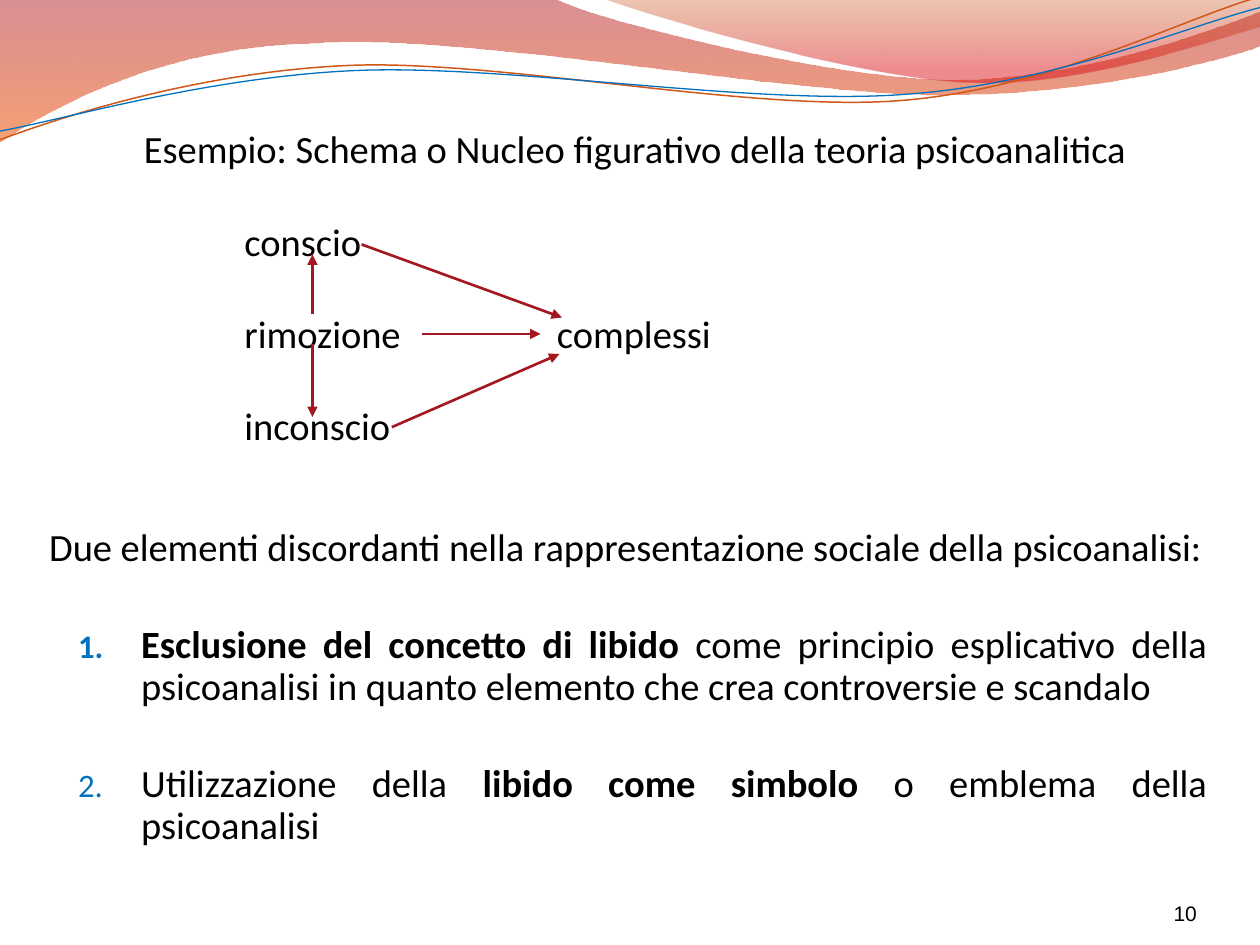
from dataclasses import dataclass

from lxml import etree
from pptx import Presentation
from pptx.dml.color import RGBColor
from pptx.enum.shapes import MSO_CONNECTOR
from pptx.enum.text import MSO_ANCHOR, MSO_AUTO_SIZE, PP_ALIGN
from pptx.oxml.ns import qn
from pptx.util import Inches, Pt

LEFT, CENTER, RIGHT, JUSTIFY = PP_ALIGN.LEFT, PP_ALIGN.CENTER, PP_ALIGN.RIGHT, PP_ALIGN.JUSTIFY
TOP, BOTTOM = MSO_ANCHOR.TOP, MSO_ANCHOR.BOTTOM
STRAIGHT = MSO_CONNECTOR.STRAIGHT


@dataclass(frozen=True)
class Theme:
    font: str = "Calibri"
    number_font: str = "Arial"
    size: int = 22
    number_size: int = 12
    text: str = "000000"
    arrow: str = "A3171E"
    bullet: str = "0070C0"
    orange: str = "CF5818"
    blue: str = "0070C0"


THEME = Theme()

# A wave part is a point to draw a line to, or three points of a Bézier curve.
BACK_WAVE = [(0, 0), (4.4, -0.01),
             [(4.76, 0.17), (6.64, 0.63), (7.58, 0.63)],
             [(8.53, 0.63), (9.58, 0.26), (10, 0.09)],
             (10.01, 0.36),
             [(9.83, 0.44), (8.7, 0.76), (7.46, 0.75)],
             [(6.22, 0.75), (3.82, 0.28), (2.57, 0.34)],
             [(1.29, 0.36), (0.46, 0.83), (-0.01, 1.13)]]
FRONT_WAVE = [(4.79, -0.01),
              [(5.09, 0.11), (6.82, 0.62), (7.69, 0.65)],
              [(8.56, 0.69), (9.61, 0.32), (10, 0.21)],
              (10, 0)]
ORANGE_STRAND = [(0, 1.11),
                 [(0.48, 0.93), (1.58, 0.57), (2.77, 0.52)],
                 [(3.95, 0.47), (5.93, 0.89), (7.13, 0.8)],
                 [(8.33, 0.71), (9.38, 0.15), (9.98, -0.02)]]
BLUE_STRAND = [(0, 1.04),
               [(0.47, 0.96), (1.64, 0.61), (2.83, 0.56)],
               [(4.03, 0.51), (5.97, 0.84), (7.17, 0.75)],
               [(8.36, 0.67), (9.41, 0.21), (10, 0.06)]]

ROW_TOP, ROW_STEP, ROW_HEIGHT = 1.73, 0.73, 0.37
LEFT_WORDS = ["conscio", "rimozione", "inconscio"]
ARROWS = [((2.87, 1.94), (4.46, 2.52)),
          ((3.35, 2.65), (4.29, 2.65)),
          ((3.11, 3.39), (4.44, 2.81)),
          ((2.48, 2.49), (2.48, 2.02)),
          ((2.48, 2.73), (2.48, 3.31))]

INTRO = "Due elementi discordanti nella rappresentazione sociale della psicoanalisi:"
ITEMS = [
    [("Esclusione del concetto di libido ", True),
     ("come principio esplicativo della psicoanalisi in quanto elemento "
      "che crea controversie e scandalo", False)],
    [("Utilizzazione della ", False), ("libido come simbolo ", True),
     ("o emblema della psicoanalisi", False)],
]


def rgb(color):
    return RGBColor.from_string(color)


def place(sp, left, top, width, height):
    sp.left, sp.top, sp.width, sp.height = map(Inches, (left, top, width, height))


def frame(sp, margin=0, anchor=TOP):
    tf = sp.text_frame
    tf.word_wrap = True
    tf.auto_size = MSO_AUTO_SIZE.NONE
    tf.vertical_anchor = anchor
    tf.margin_left = tf.margin_right = Inches(margin)
    tf.margin_top = tf.margin_bottom = Inches(margin / 2)
    return tf


def write(p, text, bold=False, align=LEFT, font=THEME.font, size=THEME.size, color=THEME.text):
    p.alignment = align
    r = p.add_run()
    r.text = text
    r.font.name, r.font.size, r.font.bold = font, Pt(size), bold
    r.font.color.rgb = rgb(color)


def add_label(slide, text, box, anchor=TOP, **text_format):
    sp = slide.shapes.add_textbox(*map(Inches, box))
    write(frame(sp, anchor=anchor).paragraphs[0], text, **text_format)


def add_outline(slide, parts, close):
    """Build straight segments through all points, then bend each group of three into a curve."""
    groups = [part if isinstance(part, list) else [part] for part in parts]
    points = [(Inches(x), Inches(y)) for group in groups for x, y in group]
    builder = slide.shapes.build_freeform(*points[0])
    builder.add_line_segments(points[1:], close=close)
    sp = builder.convert_to_shape()
    sp.shadow.inherit = False
    segments = iter(list(sp._element.iter(qn("a:lnTo"))))
    for group in groups[1:]:
        lines = [next(segments) for _ in group]
        if len(lines) == 3:
            curve = etree.Element(qn("a:cubicBezTo"))
            lines[0].addprevious(curve)
            for line in lines:
                curve.append(line[0])
                line.getparent().remove(line)
    return sp


def add_wave(slide, parts, stops):
    """Fill a closed wave from top to bottom; stops hold position, colour and opacity."""
    sp = add_outline(slide, parts, close=True)
    sp.line.fill.background()
    sp.fill.gradient()
    sp.fill.gradient_angle = 270
    for stop, (position, color, _) in zip(sp.fill.gradient_stops, stops):
        stop.position = position
        stop.color.rgb = rgb(color)
    colors = sp._element.spPr.iter(qn("a:srgbClr"))
    for element, (_, _, opacity) in zip(colors, stops):
        etree.SubElement(element, qn("a:alpha"), val=str(opacity * 1000))


def add_strand(slide, parts, color, width):
    sp = add_outline(slide, parts, close=False)
    sp.fill.background()
    sp.line.color.rgb = rgb(color)
    sp.line.width = Pt(width)


def add_arrow(slide, start, end):
    line = slide.shapes.add_connector(STRAIGHT, *map(Inches, start + end))
    line.line.color.rgb = rgb(THEME.arrow)
    line.line.width = Pt(1.5)
    etree.SubElement(line.line._get_or_add_ln(), qn("a:tailEnd"), type="triangle")
    etree.SubElement(line._element.spPr, qn("a:effectLst"))


def set_layout(p, margin, indent, before, numbered):
    p.line_spacing = 0.9
    p.space_before = Pt(before)
    pPr = p._p.get_or_add_pPr()
    pPr.set("marL", str(Inches(margin)))
    pPr.set("indent", str(Inches(indent)))
    if numbered:
        color = etree.SubElement(pPr, qn("a:buClr"))
        etree.SubElement(color, qn("a:srgbClr"), val=THEME.bullet)
        etree.SubElement(pPr, qn("a:buSzPct"), val="85000")
        etree.SubElement(pPr, qn("a:buFont"), typeface=THEME.font)
        etree.SubElement(pPr, qn("a:buAutoNum"), type="arabicPeriod")
    else:
        etree.SubElement(pPr, qn("a:buNone"))


def fill_body(body):
    place(body, 0, 4.14, 9.68, 3.36)
    tf = frame(body, margin=0.1)
    p = tf.paragraphs[0]
    write(p, INTRO)
    set_layout(p, 0.29, 0, 0, numbered=False)
    for item in ITEMS:
        p = tf.add_paragraph()
        for text, bold in item:
            write(p, text, bold=bold, align=JUSTIFY)
        set_layout(p, 1.02, -0.5, 32, numbered=True)


def main():
    prs = Presentation()
    prs.slide_width, prs.slide_height = Inches(10), Inches(7.5)
    slide = prs.slides.add_slide(prs.slide_layouts[1])

    add_wave(slide, BACK_WAVE, [(0, "AF0911", 45), (1, "EE5300", 55)])
    add_wave(slide, FRONT_WAVE, [(0, "C24400", 30), (0.8, "DC000B", 45)])
    add_strand(slide, ORANGE_STRAND, THEME.orange, 0.85)
    add_strand(slide, BLUE_STRAND, THEME.blue, 0.75)

    title, body = slide.placeholders
    place(title, 0.33, 0.99, 9.42, 0.4)
    write(frame(title).paragraphs[0],
          "Esempio: Schema o Nucleo figurativo della teoria psicoanalitica", align=CENTER)
    fill_body(body)

    for row, word in enumerate(LEFT_WORDS):
        add_label(slide, word, (1.94, ROW_TOP + row * ROW_STEP, 1.4, ROW_HEIGHT))
    add_label(slide, "complessi", (4.42, ROW_TOP + ROW_STEP, 1.4, ROW_HEIGHT))
    for start, end in ARROWS:
        add_arrow(slide, start, end)
    add_label(slide, "10", (8.67, 6.95, 0.83, 0.4), anchor=BOTTOM, align=RIGHT,
              font=THEME.number_font, size=THEME.number_size)
    prs.save("out.pptx")


if __name__ == "__main__":
    main()
